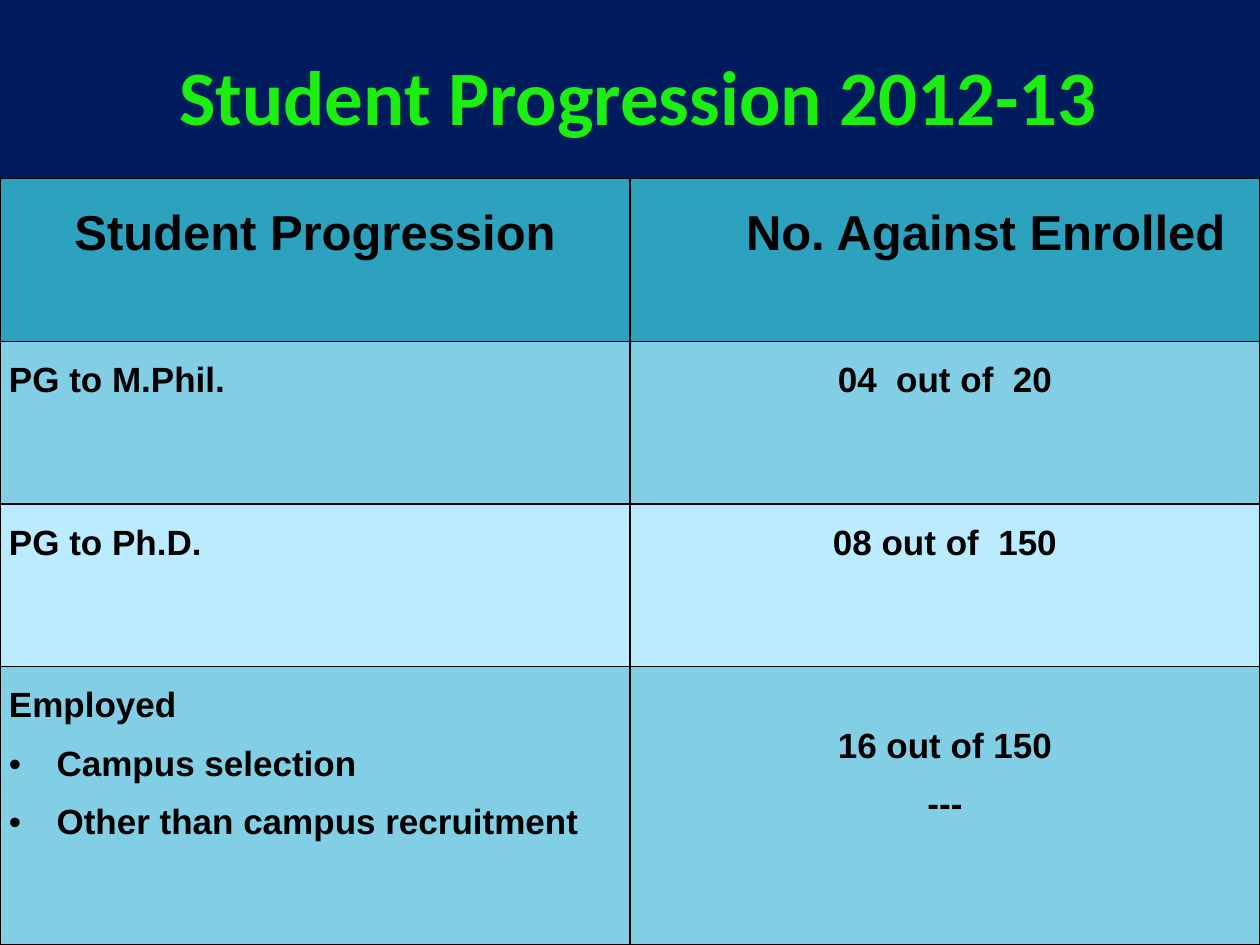
from lxml import etree
from pptx import Presentation
from pptx.dml.color import RGBColor
from pptx.enum.text import MSO_ANCHOR, PP_ALIGN
from pptx.oxml.ns import qn
from pptx.util import Cm, Pt

LEFT, CENTER = PP_ALIGN.LEFT, PP_ALIGN.CENTER
MIDDLE = MSO_ANCHOR.MIDDLE

NAVY, GREEN, BLACK = "001C5D", "1CEE12", "000000"
TEAL, SKY, PALE = "2DA2BF", "82CEE5", "BAEBFF"

TITLE = "Student Progression 2012-13"
HEADER = ("Student Progression", "No. Against Enrolled")
ROWS = [
    (["PG to M.Phil."], ["04  out of  20"]),
    (["PG to Ph.D."], ["08 out of  150"]),
    (
        ["Employed", "• Campus selection", "• Other than campus recruitment"],
        ["16 out of 150", "---"],
    ),
]
ROW_FILLS = [SKY, PALE, SKY]
ROW_HEIGHTS = [3.28, 3.28, 3.28, 5.61]
WIDTH, HEIGHT = 25.4, 19.05


def color(value):
    return RGBColor.from_string(value)


def style(font, name, size, value):
    font.name, font.size, font.bold = name, Pt(size), True
    font.color.rgb = color(value)


def add_border(cell):
    properties = cell._tc.get_or_add_tcPr()
    for side in ("lnL", "lnR", "lnT", "lnB"):
        line = etree.SubElement(properties, qn(f"a:{side}"), w=str(Pt(1)))
        fill = etree.SubElement(line, qn("a:solidFill"))
        etree.SubElement(fill, qn("a:srgbClr"), val=BLACK)


def set_indent(paragraph, margin, first_line):
    properties = paragraph._p.get_or_add_pPr()
    properties.set("marL", str(Cm(margin)))
    properties.set("indent", str(Cm(first_line)))
    return properties


def fill_cell(cell, lines, size, alignment, background):
    add_border(cell)
    cell.fill.solid()
    cell.fill.fore_color.rgb = color(background)
    cell.margin_left = cell.margin_right = Cm(0.18)
    cell.margin_top = cell.margin_bottom = 0
    for index, line in enumerate(lines):
        frame = cell.text_frame
        paragraph = frame.add_paragraph() if index else frame.paragraphs[0]
        if line.startswith("• "):
            properties = set_indent(paragraph, 0.96, -0.96)
            etree.SubElement(properties, qn("a:buFont"), typeface="Arial")
            etree.SubElement(properties, qn("a:buChar"), char="•")
        paragraph.text = line.removeprefix("• ")
        paragraph.alignment = alignment
        paragraph.line_spacing = 1.5
        style(paragraph.font, "Arial", size, BLACK)


presentation = Presentation()
presentation.slide_width, presentation.slide_height = Cm(WIDTH), Cm(HEIGHT)
slide = presentation.slides.add_slide(presentation.slide_layouts[6])
slide.background.fill.solid()
slide.background.fill.fore_color.rgb = color(NAVY)

title = slide.shapes.add_textbox(Cm(1.45), Cm(0.95), Cm(22.86), Cm(1.91)).text_frame
title.word_wrap = True
title.vertical_anchor = MIDDLE
title.text = TITLE
title.paragraphs[0].alignment = CENTER
style(title.paragraphs[0].font, "Calibri", 44, GREEN)

table_height = sum(ROW_HEIGHTS)
table = slide.shapes.add_table(
    len(ROW_HEIGHTS), len(HEADER), 0, Cm(HEIGHT - table_height), Cm(WIDTH), Cm(table_height)
).table
table.first_row = table.horz_banding = False
for row, height in zip(table.rows, ROW_HEIGHTS):
    row.height = Cm(height)

for column, text in enumerate(HEADER):
    fill_cell(table.cell(0, column), [text], 28, CENTER, TEAL)
set_indent(table.cell(0, 1).text_frame.paragraphs[0], 1, 0.64)

for row, (cells, background) in enumerate(zip(ROWS, ROW_FILLS), start=1):
    for column, (lines, alignment) in enumerate(zip(cells, (LEFT, CENTER))):
        fill_cell(table.cell(row, column), lines, 20, alignment, background)
table.cell(3, 1).margin_top = Cm(0.81)

presentation.save("out.pptx")
